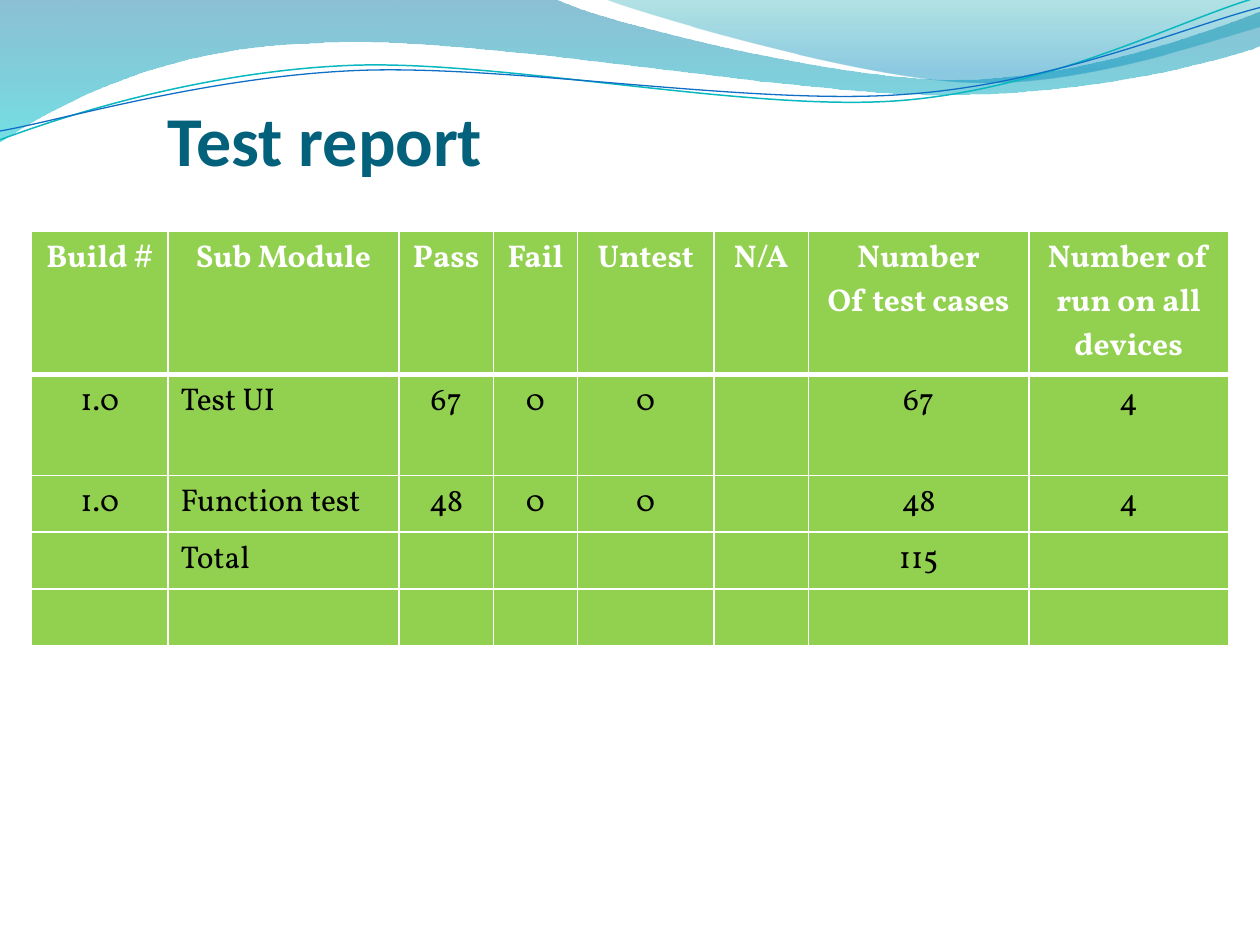
from lxml.etree import SubElement
from pptx import Presentation
from pptx.dml.color import RGBColor
from pptx.enum.text import MSO_ANCHOR, PP_ALIGN
from pptx.oxml.ns import qn
from pptx.util import Inches, Pt

WIDTH, HEIGHT = 10, 7.5
COLUMN = Inches(1) / 12
WHITE, GREEN, TEAL, BLACK = "FFFFFF", "92D050", "04617B", "000000"

# An outline is a start point, then parts of 2 numbers (straight line)
# or 6 numbers (two control points and the end of a curve).
BROAD_WAVE = [
    (0, 0), (4.4, -0.01),
    (4.76, 0.17, 6.64, 0.63, 7.58, 0.63), (8.53, 0.63, 9.58, 0.26, 10, 0.09),
    (10.01, 0.36),
    (9.83, 0.44, 8.7, 0.76, 7.46, 0.75), (6.22, 0.75, 3.82, 0.28, 2.57, 0.34),
    (1.29, 0.36, 0.46, 0.83, -0.01, 1.13), (0, 0)]
RIGHT_WAVE = [
    (4.79, -0.01),
    (5.09, 0.11, 6.82, 0.62, 7.69, 0.65), (8.56, 0.69, 9.61, 0.32, 10, 0.21),
    (10, 0), (4.79, -0.01)]
CYAN_STRAND = [
    (0, 1.11),
    (0.48, 0.93, 1.58, 0.57, 2.77, 0.52), (3.95, 0.47, 5.93, 0.89, 7.13, 0.8),
    (8.33, 0.71, 9.38, 0.15, 9.98, -0.02)]
BLUE_STRAND = [
    (0, 1.04),
    (0.47, 0.96, 1.64, 0.61, 2.83, 0.56), (4.03, 0.51, 5.97, 0.84, 7.17, 0.75),
    (8.36, 0.67, 9.41, 0.21, 10, 0.06)]

COLUMN_SPANS = [13, 22, 9, 8, 13, 9, 21, 19]
ROW_HEIGHTS = [1.14, 0.8, 0.45, 0.45, 0.45]
MODULE_COLUMN = 1
REPORT = [
    ["Build #", "Sub Module", "Pass", "Fail", "Untest", "N/A",
     "Number\nOf test cases", "Number of run on all devices"],
    ["1.0", "Test UI", "67", "0", "0", "", "67", "4"],
    ["1.0", "Function test", "48", "0", "0", "", "48", "4"],
    ["", "Total", "", "", "", "", "115", ""],
    [""] * 8,
]


def rgb(value):
    return RGBColor.from_string(value)


def columns(count):
    return round(count * COLUMN)


def set_font(paragraph, name, size, color, bold):
    font = paragraph.font
    font.name, font.size, font.bold = name, Pt(size), bold
    font.color.rgb = rgb(color)


def bend(shape, parts):
    """Join the three line segments of each curved part into one cubic curve."""
    segments = iter(list(shape._element.spPr.iter(qn("a:lnTo"))))
    for part in parts:
        lines = [next(segments) for _ in range(len(part) // 2)]
        if len(lines) == 3:
            outline = lines[0].getparent()
            curve = SubElement(outline, qn("a:cubicBezTo"))
            outline.insert(outline.index(lines[0]), curve)
            for line in lines:
                curve.append(line[0])
                outline.remove(line)


def add_outline(slide, outline, close):
    start, *parts = outline
    builder = slide.shapes.build_freeform(Inches(start[0]), Inches(start[1]))
    points = [(Inches(x), Inches(y)) for part in parts
              for x, y in zip(part[::2], part[1::2])]
    builder.add_line_segments(points, close=close)
    shape = builder.convert_to_shape()
    bend(shape, parts)
    shape.shadow.inherit = False
    return shape


def add_wave(slide, outline, stops):
    """Add a band with a downward gradient; stops are (position, colour, opacity %)."""
    wave = add_outline(slide, outline, close=True)
    wave.line.fill.background()
    wave.fill.gradient()
    wave.fill.gradient_angle = 270
    for stop, (position, color, _) in zip(wave.fill.gradient_stops, stops):
        stop.position = position
        stop.color.rgb = rgb(color)
    colors = list(wave._element.spPr.iter(qn("a:srgbClr")))
    for element, (_, _, opacity) in zip(colors, stops):
        SubElement(element, qn("a:alpha"), val=str(opacity * 1000))


def add_strand(slide, outline, color, width):
    strand = add_outline(slide, outline, close=False)
    strand.fill.background()
    strand.line.color.rgb = rgb(color)
    strand.line.width = Pt(width)


def add_title(slide, title):
    box = slide.shapes.add_textbox(columns(16), Inches(0.58), columns(108), Inches(0.85))
    frame = box.text_frame
    frame.word_wrap = True
    frame.vertical_anchor = MSO_ANCHOR.BOTTOM
    frame.margin_left = frame.margin_right = frame.margin_bottom = 0
    frame.text = title
    set_font(frame.paragraphs[0], "Calibri", 40, TEAL, True)


def set_borders(cell, top, bottom):
    properties = cell._tc.get_or_add_tcPr()
    for side, width in (("L", 1), ("R", 1), ("T", top), ("B", bottom)):
        border = SubElement(properties, qn(f"a:ln{side}"), w=str(Pt(width)))
        fill = SubElement(border, qn("a:solidFill"))
        SubElement(fill, qn("a:srgbClr"), val=WHITE)


def fill_cell(cell, content, row, column):
    is_header = row == 0
    set_borders(cell, top=3 if row == 1 else 1, bottom=3 if is_header else 1)
    cell.fill.solid()
    cell.fill.fore_color.rgb = rgb(GREEN)
    cell.text = content
    for paragraph in cell.text_frame.paragraphs:
        if is_header or column != MODULE_COLUMN:
            paragraph.alignment = PP_ALIGN.CENTER
        set_font(paragraph, "Vollkorn", 18, WHITE if is_header else BLACK, is_header)


def add_report(slide):
    table = slide.shapes.add_table(
        len(ROW_HEIGHTS), len(COLUMN_SPANS), columns(3), columns(22),
        columns(sum(COLUMN_SPANS)), Inches(sum(ROW_HEIGHTS))).table
    for column, span in zip(table.columns, COLUMN_SPANS):
        column.width = columns(span)
    for row, height in zip(table.rows, ROW_HEIGHTS):
        row.height = Inches(height)
    for r, contents in enumerate(REPORT):
        for c, content in enumerate(contents):
            fill_cell(table.cell(r, c), content, r, c)


def main():
    deck = Presentation()
    deck.slide_width, deck.slide_height = Inches(WIDTH), Inches(HEIGHT)
    slide = deck.slides.add_slide(deck.slide_layouts[6])
    add_wave(slide, BROAD_WAVE, [(0, "0074A1", 45), (1, "00C6CF", 55)])
    add_wave(slide, RIGHT_WAVE, [(0, "00A1A9", 30), (0.8, "008BBF", 45)])
    add_strand(slide, CYAN_STRAND, "0AB8BF", 0.85)
    add_strand(slide, BLUE_STRAND, "0F6FC6", 0.75)
    add_title(slide, "Test report")
    add_report(slide)
    deck.save("out.pptx")


if __name__ == "__main__":
    main()
